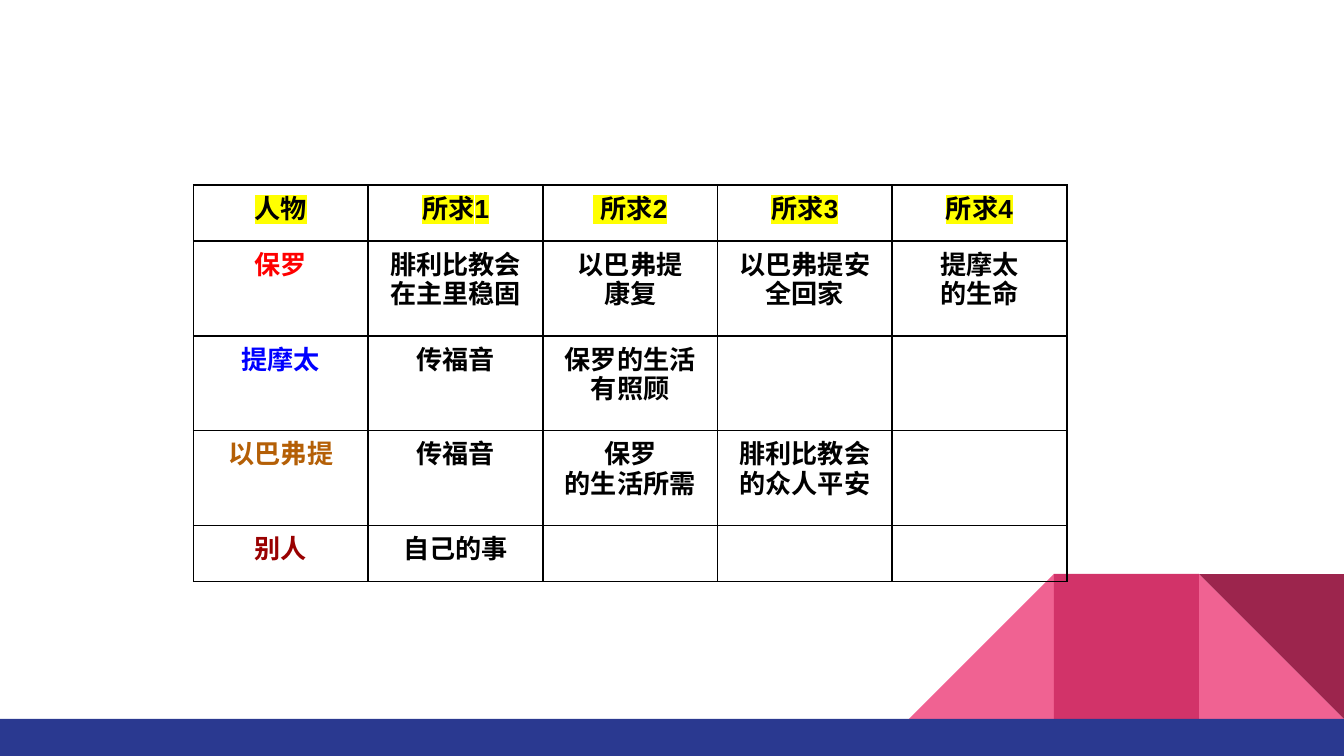
from lxml import etree
from pptx import Presentation
from pptx.dml.color import RGBColor
from pptx.enum.shapes import MSO_SHAPE
from pptx.enum.text import PP_ALIGN
from pptx.oxml.ns import qn
from pptx.util import Cm, Pt

RECTANGLE = MSO_SHAPE.RECTANGLE
TRIANGLE = MSO_SHAPE.RIGHT_TRIANGLE
CENTER = PP_ALIGN.CENTER

COLORS = {
    "text": "000000", "highlight": "FFFF00", "border": "000000",
    "pink": "F06292", "rose": "D23369", "wine": "9C254D", "navy": "2A3990",
    "保罗": "FF0000", "提摩太": "0000FF", "以巴弗提": "B45F06", "别人": "990000",
}
FONT = "Arial"

ROWS = [
    ["人物", "所求1", " 所求2", "所求3", "所求4"],
    ["保罗", "腓利比教会在主里稳固", "以巴弗提\n康复", "以巴弗提安全回家", "提摩太\n的生命"],
    ["提摩太", "传福音", "保罗的生活有照顾", "", ""],
    ["以巴弗提", "传福音", "保罗\n的生活所需", "腓利比教会的众人平安", ""],
    ["别人", "自己的事", "", "", ""],
]
ROW_HEIGHTS = [1.06, 1.79, 1.79, 1.79, 1.06]
TABLE_LEFT, TABLE_TOP, COLUMN_WIDTH, CELL_MARGIN = 3.66, 3.5, 3.3, 0.18

SLIDE_WIDTH, SLIDE_HEIGHT, BAR_HEIGHT, BLOCK = 25.4, 14.29, 0.7, 2.74
# kind, blocks from the right edge, colour, mirrored, rotation
BLOCKS = [
    (TRIANGLE, 1, "pink", False, 0),
    (TRIANGLE, 3, "pink", True, 0),
    (RECTANGLE, 2, "rose", False, 0),
    (TRIANGLE, 1, "wine", False, 180),
]


def color(name):
    return RGBColor.from_string(COLORS[name])


def add_block(slide, kind, left, top, width, height, fill):
    block = slide.shapes.add_shape(kind, Cm(left), Cm(top), Cm(width), Cm(height))
    block.shadow.inherit = False
    block.fill.solid()
    block.fill.fore_color.rgb = color(fill)
    block.line.fill.background()
    return block


def add_decoration(slide):
    bar_top = SLIDE_HEIGHT - BAR_HEIGHT
    for kind, steps, fill, mirrored, rotation in BLOCKS:
        left = SLIDE_WIDTH - steps * BLOCK
        block = add_block(slide, kind, left, bar_top - BLOCK, BLOCK, BLOCK, fill)
        block.rotation = rotation
        if mirrored:
            block._element.spPr.xfrm.set("flipH", "1")
    add_block(slide, RECTANGLE, 0, bar_top, SLIDE_WIDTH, BAR_HEIGHT, "navy")


def add_solid_color(parent, name):
    fill = etree.SubElement(parent, qn("a:solidFill"))
    etree.SubElement(fill, qn("a:srgbClr"), val=COLORS[name])


def draw_borders(cell):
    properties = cell._tc.get_or_add_tcPr()
    for index, side in enumerate(("a:lnL", "a:lnR", "a:lnT", "a:lnB")):
        line = etree.Element(qn(side), w=str(Pt(1)))
        add_solid_color(line, "border")
        properties.insert(index, line)


def highlight(span):
    properties = span._r.get_or_add_rPr()
    marker = etree.Element(qn("a:highlight"))
    etree.SubElement(marker, qn("a:srgbClr"), val=COLORS["highlight"])
    properties.find(qn("a:solidFill")).addnext(marker)


def write_cell(cell, text, color_name, highlighted):
    cell.margin_left = cell.margin_right = Cm(CELL_MARGIN)
    cell.margin_top = cell.margin_bottom = Cm(CELL_MARGIN)
    cell.text_frame.text = text
    for para in cell.text_frame.paragraphs:
        para.alignment = CENTER
        for span in para.runs:
            span.font.name = FONT
            span.font.size = Pt(14)
            span.font.bold = True
            span.font.color.rgb = color(color_name)
            etree.SubElement(span._r.get_or_add_rPr(), qn("a:ea"), typeface=FONT)
            if highlighted:
                highlight(span)


def add_requests_table(slide):
    column_count = len(ROWS[0])
    table = slide.shapes.add_table(
        len(ROWS), column_count, Cm(TABLE_LEFT), Cm(TABLE_TOP),
        Cm(column_count * COLUMN_WIDTH), Cm(sum(ROW_HEIGHTS))).table
    table.first_row = table.horz_banding = False
    for column in table.columns:
        column.width = Cm(COLUMN_WIDTH)
    for row_index, texts in enumerate(ROWS):
        table.rows[row_index].height = Cm(ROW_HEIGHTS[row_index])
        for column_index, text in enumerate(texts):
            cell = table.cell(row_index, column_index)
            cell.fill.background()
            draw_borders(cell)
            if text:
                is_person = row_index > 0 and column_index == 0
                write_cell(cell, text, text if is_person else "text", row_index == 0)


def main():
    deck = Presentation()
    deck.slide_width, deck.slide_height = Cm(SLIDE_WIDTH), Cm(SLIDE_HEIGHT)
    slide = deck.slides.add_slide(deck.slide_layouts[6])
    add_decoration(slide)
    add_requests_table(slide)
    deck.save("out.pptx")


if __name__ == "__main__":
    main()
